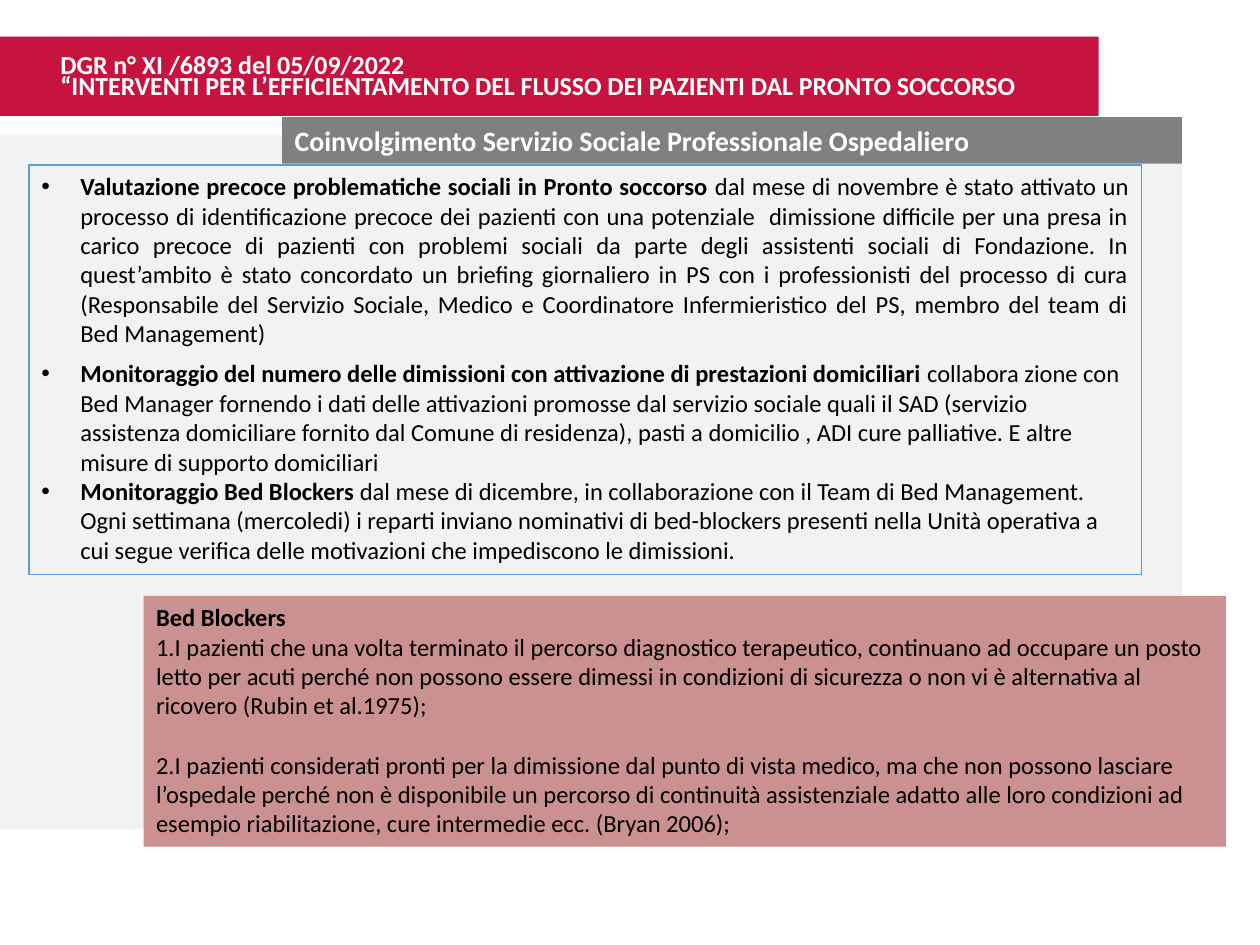
import pptx
import pptx.util
import pptx.dml.color
import pptx.enum.shapes
import pptx.enum.text
import pptx.oxml.ns
from lxml import etree

Inches = pptx.util.Inches
Pt = pptx.util.Pt


def rgb(value):
    return pptx.dml.color.RGBColor.from_string(value)


def add_run(p, text, size=14, color="000000", bold=False, font="Calibri"):
    r = p.add_run()
    r.text = text
    r.font.name = font
    r.font.size = Pt(size)
    r.font.bold = bold
    r.font.color.rgb = rgb(color)


class Deck:
    RED, GREY, PINK = "C6133F", "808080", "CB9191"
    PANEL, BOX, BLUE, WHITE = "F1F2F2", "F2F2F2", "5B9BD5", "FFFFFF"

    def __init__(self, prs):
        self.s = prs.slides.add_slide(prs.slide_layouts[6])

    def frame(self, sp, anchor=pptx.enum.text.MSO_ANCHOR.TOP):
        tf = sp.text_frame
        tf.word_wrap = True
        tf.vertical_anchor = anchor
        return tf

    def rect(self, x, y, w, h, fill, line=None):
        sp = self.s.shapes.add_shape(
            pptx.enum.shapes.MSO_SHAPE.RECTANGLE,
            Inches(x), Inches(y), Inches(w), Inches(h))
        sp.shadow.inherit = False
        sp.fill.solid()
        sp.fill.fore_color.rgb = rgb(fill)
        if line:
            sp.line.color.rgb = rgb(line)
            sp.line.width = Pt(1)
        else:
            sp.line.fill.background()
        return sp

    def title(self, x, y, w, h, lines):
        sp = self.s.shapes.add_textbox(Inches(x), Inches(y), Inches(w), Inches(h))
        p = self.frame(sp).paragraphs[0]
        p.line_spacing = 0.7
        for i, line in enumerate(lines):
            if i:
                p.add_line_break()
            add_run(p, line, size=14.8, color=self.WHITE, bold=True)

    def paragraphs(self, sp, items, bullet=False):
        """Write (bold lead, plain text) pairs, one paragraph each."""
        tf = self.frame(sp)
        for i, (lead, text) in enumerate(items):
            p = tf.add_paragraph() if i else tf.paragraphs[0]
            p.alignment = pptx.enum.text.PP_ALIGN.LEFT
            if bullet:
                self.bullet(p)
            if lead:
                add_run(p, lead, bold=True)
            if text:
                add_run(p, text)
        return tf.paragraphs

    def bullet(self, p, indent=0.31):
        pPr = p._p.get_or_add_pPr()
        pPr.set("marL", str(Inches(indent)))
        pPr.set("indent", str(-Inches(indent)))
        font = etree.SubElement(pPr, pptx.oxml.ns.qn("a:buFont"))
        font.set("typeface", "Arial")
        char = etree.SubElement(pPr, pptx.oxml.ns.qn("a:buChar"))
        char.set("char", "•")


ACTIONS = [
    ("Valutazione precoce problematiche sociali in Pronto soccorso ",
     "dal mese di novembre è stato attivato un processo di identificazione precoce "
     "dei pazienti con una potenziale  dimissione difficile per una presa in carico "
     "precoce di pazienti con problemi sociali da parte degli assistenti sociali di "
     "Fondazione. In quest’ambito è stato concordato un briefing giornaliero in PS con "
     "i professionisti del processo di cura (Responsabile del Servizio Sociale, Medico "
     "e Coordinatore Infermieristico del PS, membro del team di Bed Management)"),
    ("Monitoraggio del numero delle dimissioni con attivazione di prestazioni domiciliari ",
     "collabora zione con Bed Manager fornendo i dati delle attivazioni promosse dal "
     "servizio sociale quali il SAD (servizio assistenza domiciliare fornito dal Comune "
     "di residenza), pasti a domicilio , ADI cure palliative. E altre misure di supporto "
     "domiciliari"),
    ("Monitoraggio Bed Blockers ",
     "dal mese di dicembre, in collaborazione con il Team di Bed Management. Ogni "
     "settimana (mercoledi) i reparti inviano nominativi di bed-blockers presenti nella "
     "Unità operativa a cui segue verifica delle motivazioni che impediscono le "
     "dimissioni."),
]

DEFINITIONS = [
    ("Bed Blockers", ""),
    ("", "1.I pazienti che una volta terminato il percorso diagnostico terapeutico, "
         "continuano ad occupare un posto letto per acuti perché non possono essere "
         "dimessi in condizioni di sicurezza o non vi è alternativa al ricovero (Rubin "
         "et al.1975);"),
    ("", "2.I pazienti considerati pronti per la dimissione dal punto di vista medico, "
         "ma che non possono lasciare l’ospedale perché non è disponibile un percorso di "
         "continuità assistenziale adatto alle loro condizioni ad esempio riabilitazione, "
         "cure intermedie ecc. (Bryan 2006);"),
]


def main():
    prs = pptx.Presentation()
    prs.slide_width, prs.slide_height = Inches(10), Inches(7.5)
    deck = Deck(prs)

    # Background panel and title band
    deck.rect(0, 1.07, 9.38, 5.51, deck.PANEL)
    deck.rect(0, 0.29, 8.72, 0.63, deck.RED)
    deck.title(0.38, 0.4, 9.62, 0.69, [
        "DGR n° XI /6893 del 05/09/2022 ",
        "“INTERVENTI PER L’EFFICIENTAMENTO DEL FLUSSO DEI PAZIENTI DAL PRONTO SOCCORSO"])

    # Subtitle bar
    sp = deck.rect(2.24, 0.93, 7.14, 0.37, deck.GREY)
    p = deck.frame(sp, pptx.enum.text.MSO_ANCHOR.MIDDLE).paragraphs[0]
    p.alignment = pptx.enum.text.PP_ALIGN.LEFT
    add_run(p, "Coinvolgimento Servizio Sociale Professionale Ospedaliero",
            size=16, color=deck.WHITE, bold=True)

    # Actions of the social service
    sp = deck.rect(0.23, 1.31, 8.83, 3.25, deck.BOX, line=deck.BLUE)
    first = deck.paragraphs(sp, ACTIONS, bullet=True)[0]
    first.alignment = pptx.enum.text.PP_ALIGN.JUSTIFY
    first.space_after = Pt(6)

    # Definitions of bed blockers, the second one set a line apart
    sp = deck.rect(1.14, 4.73, 8.59, 1.99, deck.PINK)
    deck.paragraphs(sp, DEFINITIONS)[-1].space_before = Pt(17)

    prs.save("out.pptx")


if __name__ == "__main__":
    main()
